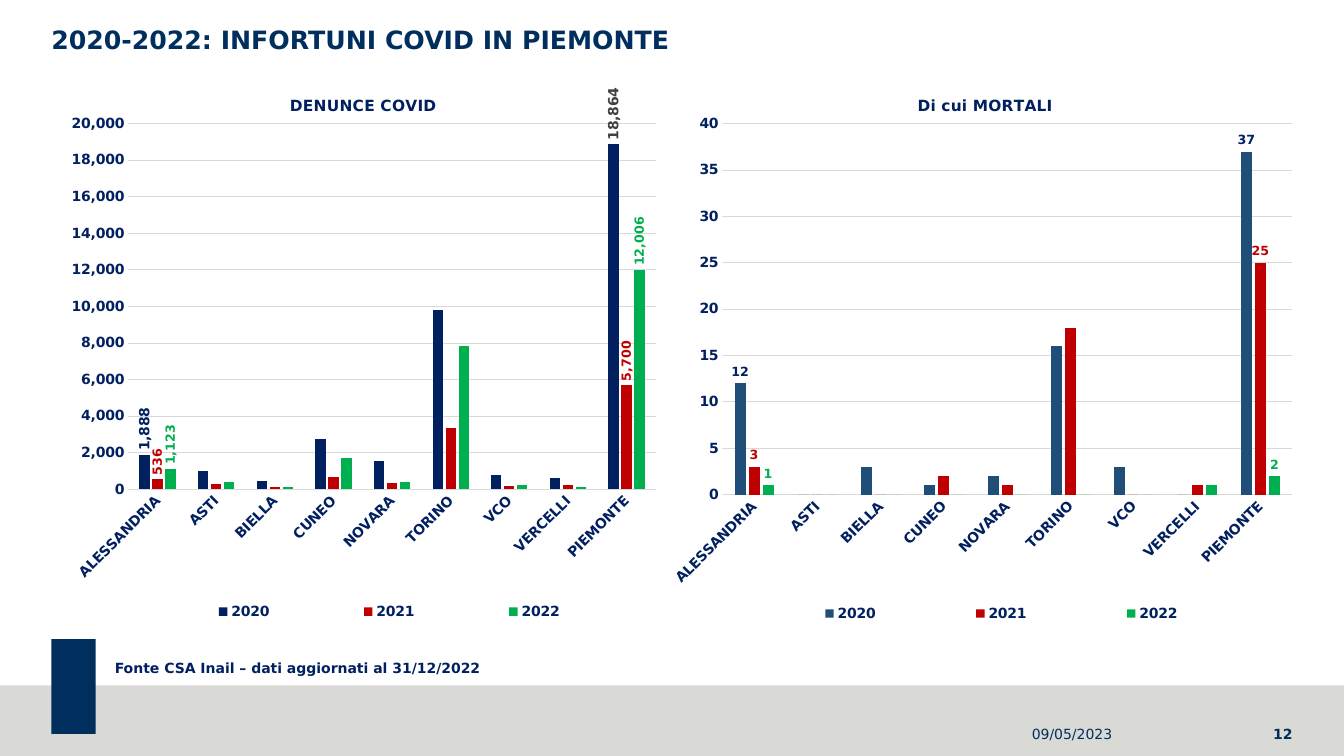
from lxml import etree
from pptx import Presentation
from pptx import util as u
from pptx.chart import data as cd
from pptx.dml import color as col
from pptx.enum import chart as ch
from pptx.enum import shapes, text
from pptx.oxml import ns

NAVY, INK, RED, GREEN = "002E5D", "002060", "C00000", "00B050"
GREY, RULE, STEEL, DARK = "D9D9D6", "D9D9D9", "1F4E79", "404040"
TOWNS = ["ALESSANDRIA", "ASTI", "BIELLA", "CUNEO", "NOVARA", "TORINO",
         "VCO", "VERCELLI", "PIEMONTE"]
YEARS = ["2020", "2021", "2022"]
CASES = [[1888, 1006, 467, 2764, 1527, 9779, 801, 632, 18864],
         [536, 284, 141, 650, 368, 3348, 159, 214, 5700],
         [1123, 424, 114, 1718, 387, 7837, 255, 148, 12006]]
DEATHS = [[12, 0, 3, 1, 2, 16, 3, 0, 37],
          [3, 0, 0, 2, 1, 18, 0, 1, 25],
          [1, 0, 0, 0, 0, 0, 0, 1, 2]]


def px(n):
    return u.Emu(n * 9144)


def rgb(code):
    return col.RGBColor.from_string(code)


class Deck:
    """Style and current slide, with one method per kind of element."""

    face = "DejaVu Sans"

    def __init__(self):
        self.prs = Presentation()
        self.prs.slide_width, self.prs.slide_height = px(1333), px(750)
        self.slide = self.prs.slides.add_slide(self.prs.slide_layouts[6])

    def style(self, font, size, code=INK, bold=True):
        font.name, font.size, font.bold = self.face, u.Pt(size), bold
        font.color.rgb = rgb(code)

    def block(self, x, y, w, h, code):
        box = self.slide.shapes.add_shape(
            shapes.MSO_SHAPE.RECTANGLE, px(x), px(y), px(w), px(h))
        box.shadow.inherit = False
        box.fill.solid()
        box.fill.fore_color.rgb = rgb(code)
        box.line.fill.background()

    def label(self, x, y, w, h, words, size=10, code=NAVY, bold=True,
              align="LEFT", anchor="TOP", pad=(0, 0), lead=1.0):
        box = self.slide.shapes.add_textbox(px(x), px(y), px(w), px(h))
        frame = box.text_frame
        frame.word_wrap = True
        frame.margin_left = frame.margin_right = px(pad[0])
        frame.margin_top = frame.margin_bottom = px(pad[1])
        frame.vertical_anchor = text.MSO_ANCHOR[anchor]
        frame.text = words
        para = frame.paragraphs[0]
        para.alignment = text.PP_ALIGN[align]
        para.line_spacing = lead
        self.style(para.runs[0].font, size, code, bold)

    def place(self, part, spot, inner=False):
        for old in part.findall(ns.qn("c:layout")):
            part.remove(old)
        frame = etree.Element(ns.qn("c:layout"))
        inside = etree.SubElement(frame, ns.qn("c:manualLayout"))
        rules = [("layoutTarget", "inner")] if inner else []
        rules += [("xMode", "edge"), ("yMode", "edge")]
        rules += zip("xywh", spot)
        for name, val in rules:
            etree.SubElement(inside, ns.qn("c:" + name)).set("val", str(val))
        ahead = [kid for kid in part
                 if kid.tag in (ns.qn("c:tx"), ns.qn("c:legendPos"))]
        part.insert(len(ahead), frame)

    def turn(self, part, angle):
        for body in part.xpath(".//a:bodyPr"):
            body.set("rot", str(angle * 60000))
            body.set("vert", "horz")

    def bars(self, x, y, w, h, title, rows, codes, top, step, spots,
             marks, turned=False):
        data = cd.CategoryChartData(number_format="#,##0")
        data.categories = TOWNS
        for year, row in zip(YEARS, rows):
            data.add_series(year, row)
        chart = self.slide.shapes.add_chart(
            ch.XL_CHART_TYPE.COLUMN_CLUSTERED,
            px(x), px(y), px(w), px(h), data).chart
        chart.font.name, chart.font.size = "Calibri", u.Pt(10)
        chart.has_title = True
        frame = chart.chart_title.text_frame
        frame.text = title
        self.style(frame.paragraphs[0].runs[0].font, 11)
        chart.chart_title.include_in_layout = False
        chart.has_legend = True
        chart.legend.position = ch.XL_LEGEND_POSITION.BOTTOM
        chart.legend.include_in_layout = False
        self.style(chart.legend.font, 10)
        self.axes(chart, top, step)
        plot = chart.plots[0]
        plot.gap_width, plot.overlap = 219, -27
        plot.vary_by_categories = False
        for bar, code, pair in zip(plot.series, codes, marks):
            self.paint(bar, code, pair, turned)
        root = chart.element
        for tag, spot in zip(("title", "plotArea", "legend"), spots):
            part = root.xpath("./c:chart/c:" + tag)[0]
            self.place(part, spot, tag == "plotArea")

    def axes(self, chart, top, step):
        cat, val = chart.category_axis, chart.value_axis
        for axis in (cat, val):
            axis.major_tick_mark = axis.minor_tick_mark = ch.XL_TICK_MARK.NONE
            self.style(axis.tick_labels.font, 10)
        self.turn(cat._element, -45)
        val.minimum_scale, val.maximum_scale, val.major_unit = 0, top, step
        val.tick_labels.number_format = "#,##0"
        val.tick_labels.number_format_is_linked = False
        val.format.line.fill.background()
        val.has_major_gridlines = True
        for line in (cat.format.line, val.major_gridlines.format.line):
            line.color.rgb, line.width = rgb(RULE), u.Pt(0.75)

    def paint(self, bar, code, pair, turned):
        bar.format.fill.solid()
        bar.format.fill.fore_color.rgb = rgb(code)
        bar.invert_if_negative = False
        bar.data_labels.show_value = False
        for spot, (size, tint) in zip((0, len(TOWNS) - 1), pair):
            tag = bar.points[spot].data_label
            self.style(tag.font, size, tint)
            tag.position = ch.XL_LABEL_POSITION.OUTSIDE_END
        if turned:
            self.turn(bar._element, -90)


def main():
    deck = Deck()
    deck.block(0, 680, 1333, 70, GREY)
    deck.block(51, 634, 44, 94, NAVY)
    deck.label(51, 28, 1232, 76, "2020-2022: INFORTUNI COVID IN PIEMONTE",
               size=18, lead=0.9)
    deck.label(1123, 708, 159, 40, "12", align="RIGHT", anchor="MIDDLE")
    deck.label(104, 649, 1179, 27,
               "Fonte CSA Inail – dati aggiornati al 31/12/2022",
               code=INK, pad=(10, 5))
    deck.label(945, 708, 158, 40, "09/05/2023", bold=False,
               align="RIGHT", anchor="MIDDLE")
    red, green = [(9, RED)] * 2, [(9, GREEN)] * 2
    deck.bars(51, 75, 615, 554, "DENUNCE COVID", CASES, (INK, RED, GREEN),
              20000, 2000,
              [(0.38, 0.03), (0.124, 0.086, 0.851, 0.655),
               (0.125, 0.93, 0.84, 0.06)],
              [[(10, INK), (10, DARK)], red, green], turned=True)
    deck.bars(667, 75, 615, 556, "Di cui MORTALI", DEATHS,
              (STEEL, RED, GREEN), 40, 5,
              [(0.39, 0.03), (0.087, 0.086, 0.921, 0.662),
               (0.09, 0.93, 0.88, 0.06)],
              [[(9, INK)] * 2, red, green])
    deck.prs.save("out.pptx")


if __name__ == "__main__":
    main()
